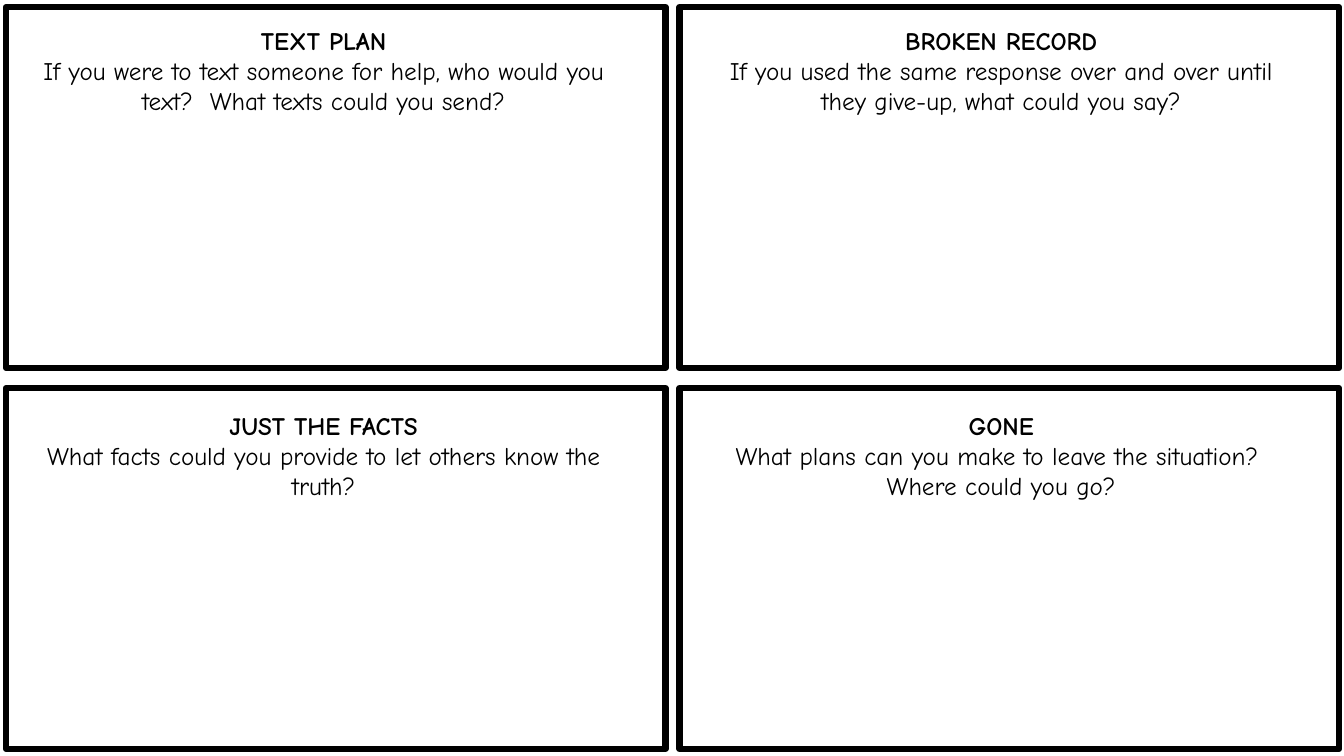
from pptx import Presentation
from pptx.dml.color import RGBColor
from pptx.enum.shapes import MSO_SHAPE
from pptx.enum.text import MSO_AUTO_SIZE, PP_ALIGN
from pptx.util import Inches, Pt

RECTANGLE = MSO_SHAPE.RECTANGLE
CENTER = PP_ALIGN.CENTER
GROW = MSO_AUTO_SIZE.SHAPE_TO_FIT_TEXT

CARDS = [
    ("TEXT PLAN", "If you were to text someone for help, who would you text?  What texts could you send?"),
    ("BROKEN RECORD", "If you used the same response over and over until they give-up, what could you say?"),
    ("JUST THE FACTS", "What facts could you provide to let others know the truth?"),
    ("GONE", "What plans can you make to leave the situation?  Where could you go?"),
]
COLUMNS = 2
CARD_LEFTS, CARD_TOPS = (0.06, 6.74), (0.07, 3.85)
CARD_SIZE = (6.54, 3.58)
PROMPT_LEFTS, PROMPT_TOPS = (0.32, 7.04), (0.2, 4.02)
PROMPT_SIZE = (5.78, 1.01)
BLACK, WHITE = "000000", "FFFFFF"
FONT = {"name": "Comic Neue", "size": Pt(18)}


def color(value):
    return RGBColor.from_string(value)


def add_card(page, left, top):
    card = page.shapes.add_shape(RECTANGLE, *map(Inches, (left, top, *CARD_SIZE)))
    card.shadow.inherit = False
    card.fill.solid()
    card.fill.fore_color.rgb = color(WHITE)
    card.line.color.rgb = color(BLACK)
    card.line.width = Pt(4.5)


def add_prompt(page, left, top, heading, question):
    box = page.shapes.add_textbox(*map(Inches, (left, top, *PROMPT_SIZE)))
    frame = box.text_frame
    frame.word_wrap = True
    frame.auto_size = GROW
    frame.text = f"{heading}\n{question}"
    for para, bold in zip(frame.paragraphs, (True, False)):
        para.alignment = CENTER
        font = para.runs[0].font
        for name, value in {**FONT, "bold": bold}.items():
            setattr(font, name, value)
        font.color.rgb = color(BLACK)


def main():
    deck = Presentation()
    deck.slide_width, deck.slide_height = Inches(13.33), Inches(7.5)
    page = deck.slides.add_slide(deck.slide_layouts[6])
    for index, (heading, question) in enumerate(CARDS):
        row, column = divmod(index, COLUMNS)
        add_card(page, CARD_LEFTS[column], CARD_TOPS[row])
        add_prompt(page, PROMPT_LEFTS[column], PROMPT_TOPS[row], heading, question)
    deck.save("out.pptx")


if __name__ == "__main__":
    main()
